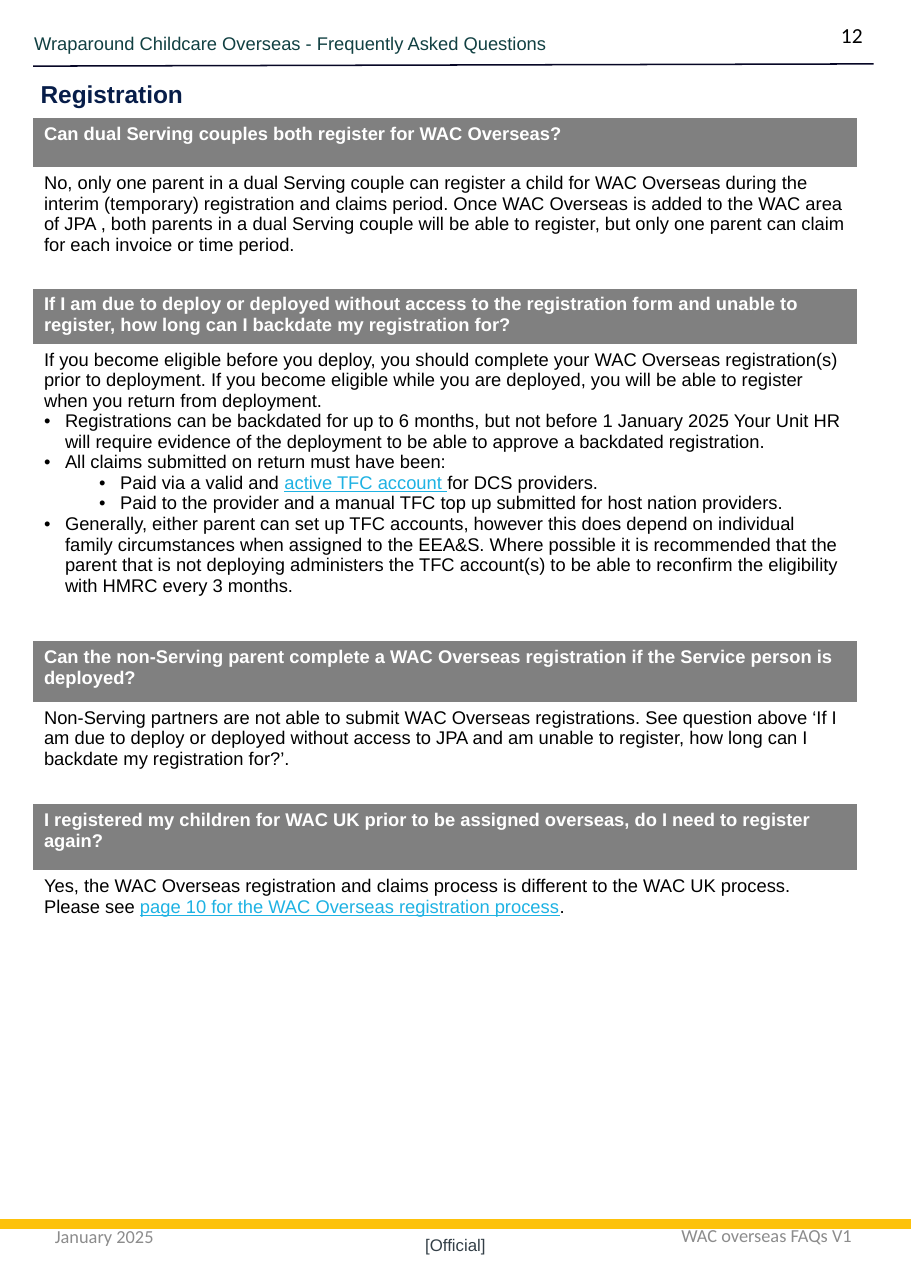
import pptx
import pptx.dml.color
import pptx.enum.shapes
import pptx.enum.text
import pptx.oxml.ns
import pptx.util
from lxml import etree

Inches = pptx.util.Inches
RGBColor = pptx.dml.color.RGBColor
ALIGN = pptx.enum.text.PP_ALIGN
ANCHOR = pptx.enum.text.MSO_ANCHOR
qn = pptx.oxml.ns.qn

WHITE = RGBColor(0xFF, 0xFF, 0xFF)
BLACK = RGBColor(0, 0, 0)
GREY = RGBColor(0x80, 0x80, 0x80)
FOOTER_GREY = RGBColor(0x8C, 0x8C, 0x8C)
SLATE = RGBColor(0x33, 0x3F, 0x47)
NAVY = RGBColor(0x07, 0x1D, 0x49)
RULE = RGBColor(0x06, 0x06, 0x25)
GREEN = RGBColor(0x11, 0x40, 0x42)
LINK = RGBColor(0x1E, 0xB2, 0xE3)
YELLOW = RGBColor(0xFD, 0xC2, 0x0B)

PAGE_W, PAGE_H = 8.27, 11.69
NO_STYLE = "{2D5ABB26-0587-4C30-8999-92F81FD0307C}"
PLAIN, BULLET, SUB_BULLET = None, 0, 1

# Each entry: question, question height, answer height, answer paragraphs.
FAQS = [
    ("Can dual Serving couples both register for WAC Overseas?", 0.45, 1.1, [
        (PLAIN, ["No, only one parent in a dual Serving couple can register a child for WAC Overseas "
                 "during the interim (temporary) registration and claims period. Once WAC Overseas is "
                 "added to the WAC area of JPA , both parents in a dual Serving couple will be able to "
                 "register, but only one parent can claim for each invoice or time period."]),
    ]),
    ("If I am due to deploy or deployed without access to the registration form and unable to "
     "register, how long can I backdate my registration for?", 0.5, 2.7, [
        (PLAIN, ["If you become eligible before you deploy, you should complete your WAC Overseas "
                 "registration(s) prior to deployment. If you become eligible while you are deployed, "
                 "you will be able to register when you return from deployment."]),
        (BULLET, ["Registrations can be backdated for up to 6 months, but not before 1 January 2025 "
                  "Your Unit HR will require evidence of the deployment to be able to approve a "
                  "backdated registration."]),
        (BULLET, ["All claims submitted on return must have been:"]),
        (SUB_BULLET, ["Paid via a valid and ", "active TFC account ", "for DCS providers."]),
        (SUB_BULLET, ["Paid to the provider and a manual TFC top up submitted for host nation "
                      "providers."]),
        (BULLET, ["Generally, either parent can set up TFC accounts, however this does depend on "
                  "individual family circumstances when assigned to the EEA&S. Where possible it is "
                  "recommended that the parent that is not deploying administers the TFC account(s) "
                  "to be able to reconfirm the eligibility with HMRC every 3 months."]),
    ]),
    ("Can the non-Serving parent complete a WAC Overseas registration if the Service person is "
     "deployed?", 0.55, 0.93, [
        (PLAIN, ["Non-Serving partners are not able to submit WAC Overseas registrations. See question "
                 "above ‘If I am due to deploy or deployed without access to JPA and am unable to "
                 "register, how long can I backdate my registration for?’."]),
    ]),
    ("I registered my children for WAC UK prior to be assigned overseas, do I need to register "
     "again?", 0.6, 0.92, [
        (PLAIN, ["Yes, the WAC Overseas registration and claims process is different to the WAC UK "
                 "process. Please see ", "page 10 for the WAC Overseas registration process", "."]),
    ]),
]


def add_run(p, text, size, color, font="Arial", bold=False, underline=False):
    """Add one formatted run to a paragraph."""
    r = p.add_run()
    r.text = text
    r.font.name, r.font.size = font, pptx.util.Pt(size)
    r.font.bold, r.font.underline = bold, underline
    r.font.color.rgb = color


def add_label(s, box, text, size, color, font="Arial", bold=False,
              align=ALIGN.LEFT, anchor=ANCHOR.TOP, inset=True):
    """Add a single-paragraph text box."""
    tf = s.shapes.add_textbox(*map(Inches, box)).text_frame
    tf.word_wrap, tf.vertical_anchor = True, anchor
    if not inset:
        tf.margin_left = tf.margin_top = tf.margin_right = tf.margin_bottom = 0
    p = tf.paragraphs[0]
    p.alignment = align
    add_run(p, text, size, color, font, bold)


def add_rule(s, x1, y1, x2, y2, color, width):
    """Draw a straight line without a shadow."""
    line = s.shapes.add_connector(pptx.enum.shapes.MSO_CONNECTOR.STRAIGHT,
                                  *map(Inches, (x1, y1, x2, y2)))
    line.line.color.rgb, line.line.width = color, pptx.util.Pt(width)
    etree.SubElement(line._element.spPr, qn("a:effectLst"))


def add_bullet(p, level):
    """Give a paragraph a hanging bullet at its level."""
    p.level = level
    pPr = p._p.get_or_add_pPr()
    pPr.set("marL", str(Inches(0.19 + 0.5 * level)))
    pPr.set("indent", str(Inches(-0.19)))
    etree.SubElement(pPr, qn("a:buFont"), typeface="Arial")
    etree.SubElement(pPr, qn("a:buChar"), char="•")


def fill_cell(cell, fill, paragraphs, color, bold=False):
    """Fill a cell with paragraphs, styling every second run as a link."""
    cell.fill.solid()
    cell.fill.fore_color.rgb = fill
    tf = cell.text_frame
    for i, (level, texts) in enumerate(paragraphs):
        p = tf.add_paragraph() if i else tf.paragraphs[0]
        if level is not PLAIN:
            add_bullet(p, level)
        for j, text in enumerate(texts):
            linked = j % 2 == 1
            add_run(p, text, 12, LINK if linked else color, bold=bold, underline=linked)


def add_faq_table(s, x, y, w):
    """Place the questions and answers as alternating table rows."""
    heights = [h for _, question_h, answer_h, _ in FAQS for h in (question_h, answer_h)]
    table = s.shapes.add_table(len(heights), 1, *map(Inches, (x, y, w, sum(heights)))).table
    table.first_row = table.horz_banding = False
    table._tbl.tblPr.find(qn("a:tableStyleId")).text = NO_STYLE
    for row, h in zip(table.rows, heights):
        row.height = Inches(h)
    for i, (question, _, _, answer) in enumerate(FAQS):
        fill_cell(table.cell(2 * i, 0), GREY, [(PLAIN, [question])], WHITE, bold=True)
        fill_cell(table.cell(2 * i + 1, 0), WHITE, answer, BLACK)


def add_header(s, x, y, w):
    """Place the running title, page number, rule and section heading."""
    add_label(s, (x + 0.01, y + 0.14, 5.93, 0.4),
              "Wraparound Childcare Overseas -\u00a0Frequently Asked Questions".replace("\u00a0", " "),
              12, GREEN, inset=False)
    add_label(s, (x + w - 0.66, y, 0.66, 0.34), "12", 14, BLACK, "Calibri", align=ALIGN.RIGHT)
    add_rule(s, x, y + 0.45, x + w, y + 0.43, RULE, 1)
    add_label(s, (x - 0.03, y + 0.52, 5.05, 0.37), "Registration", 16, NAVY, bold=True)


def add_footer(s, x, y, w):
    """Place the yellow band with the date, marking and version."""
    add_label(s, (x + 0.4, y - 0.2, 1.93, 0.62), "January 2025", 12, FOOTER_GREY, "Calibri",
              anchor=ANCHOR.MIDDLE)
    add_label(s, (x + w - 2.62, y - 0.21, 2.62, 0.62), "WAC overseas FAQs V1", 12, FOOTER_GREY,
              "Calibri", align=ALIGN.CENTER, anchor=ANCHOR.MIDDLE)
    add_rule(s, x, y, x + w, y, YELLOW, 6)
    add_label(s, (x, y + 0.09, w, 0.19), "[Official]", 11, SLATE, align=ALIGN.CENTER,
              anchor=ANCHOR.BOTTOM, inset=False)


def main():
    """Build the page and save it."""
    prs = pptx.Presentation()
    prs.slide_width, prs.slide_height = Inches(PAGE_W), Inches(PAGE_H)
    s = prs.slides.add_slide(prs.slide_layouts[6])
    add_header(s, 0.3, 0.15, 7.63)
    add_faq_table(s, 0.3, 1.07, 7.48)
    add_footer(s, 0, 11.11, PAGE_W)
    prs.save("out.pptx")


if __name__ == "__main__":
    main()
